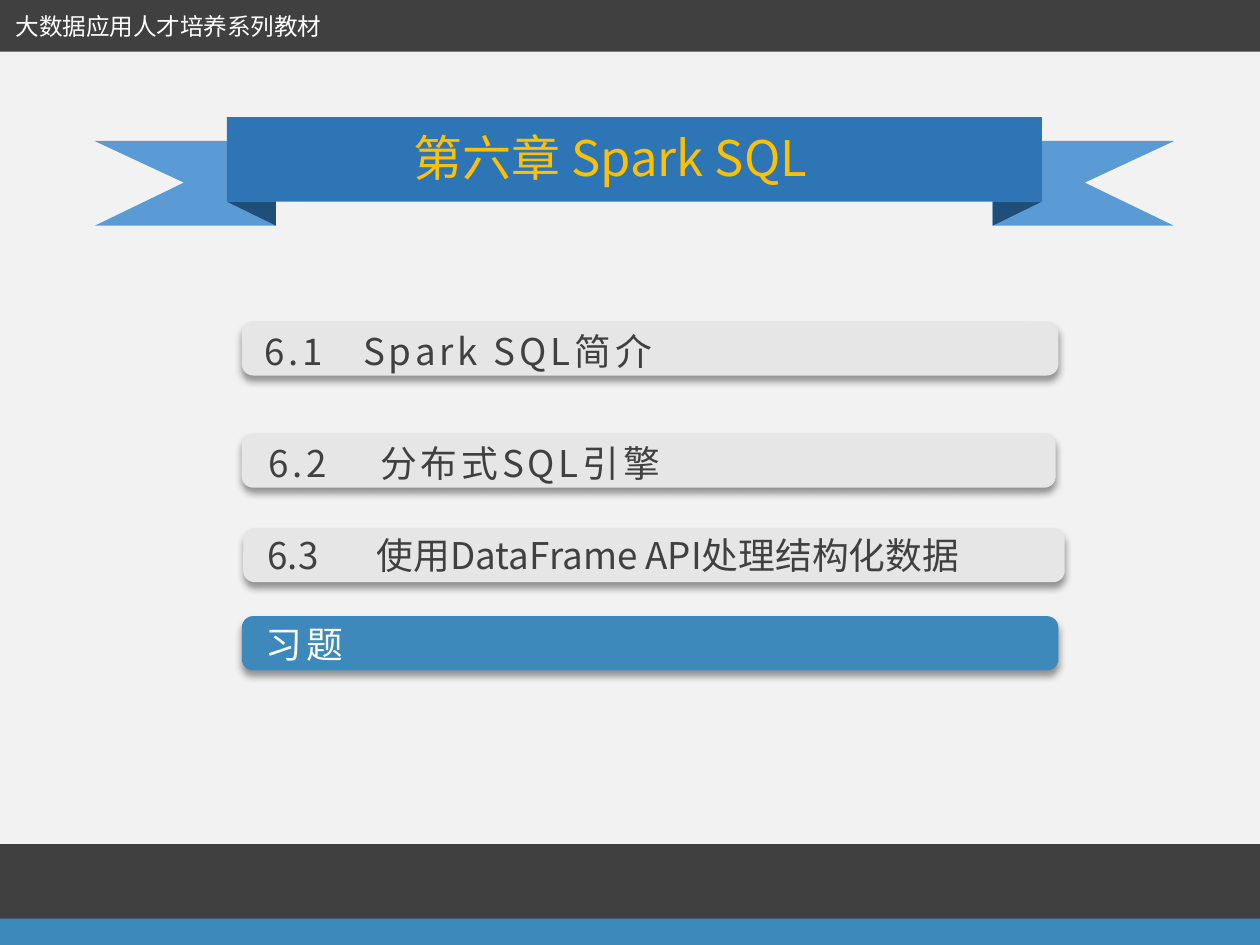
from lxml.etree import SubElement
from pptx import Presentation
from pptx.dml.color import RGBColor
from pptx.enum.shapes import MSO_SHAPE
from pptx.enum.text import MSO_ANCHOR, MSO_AUTO_SIZE, PP_ALIGN
from pptx.oxml.ns import qn
from pptx.util import Pt

FONT = "Noto Sans CJK SC"
DARK, BLUE, GREY, WHITE = "404040", "3D89BC", "E6E6E6", "FFFFFF"
TITLE = "第六章 Spark SQL"
SERIES = "大数据应用人才培养系列教材"
STRIPS = [
    (-0.7, -0.7, 721.4, 30.2, DARK),
    (0, 482.4, 720, 43.2, DARK),
    (0, 524.9, 720, 15.1, BLUE),
]
SPACED = dict(size=21, color=DARK, spacing=220)
ITEMS = [
    dict(bar=(138.2, 183.6, 466.6, 31), fill=GREY, text="6.1\tSpark SQL简介",
         box=(144, 184.3, 245.5, 32.4), style=dict(SPACED, tab=56.5)),
    dict(bar=(138.2, 247.7, 465.1, 31), fill=GREY, text="6.2\t分布式SQL引擎",
         box=(146.2, 248.4, 465.8, 32.4), style=dict(SPACED, tab=64)),
    dict(bar=(139, 301.7, 469.4, 31), fill=GREY, text="6.3\t使用DataFrame API处理结构化数据",
         box=None, style=dict(size=21, color=DARK, tab=62.5, left=12)),
    dict(bar=(138.2, 352.1, 466.6, 31), fill=BLUE, text="习题",
         box=(144.7, 351.4, 59, 32.4), style=dict(SPACED, color=WHITE)),
]
RIBBON_SPAN = 725
TAIL = [(54, 80.6), (157.7, 80.6), (157.7, 128.9), (54.4, 128.9), (105.1, 104.4)]
FOLD = dict(left=136.8, top=108, width=13.7, height=28.1)


def rgb(color):
    return RGBColor.from_string(color)


def paint(shape, color):
    shape.fill.solid()
    shape.fill.fore_color.rgb = rgb(color)
    shape.line.fill.background()
    shape.shadow.inherit = False
    return shape


def add_block(s, kind, box, color):
    return paint(s.shapes.add_shape(kind, *map(Pt, box)), color)


def add_tail(s, points):
    corners = [(Pt(x), Pt(y)) for x, y in points]
    builder = s.shapes.build_freeform(*corners[0], scale=1.0)
    builder.add_line_segments(corners[1:], close=True)
    return paint(builder.convert_to_shape(), "5B9BD5")


def add_fold(s, left, rotation, flips):
    box = (left, FOLD["top"], FOLD["width"], FOLD["height"])
    fold = add_block(s, MSO_SHAPE.RIGHT_TRIANGLE, box, "1F4E79")
    fold.rotation = rotation
    for flip in flips:
        fold.element.spPr.find(qn("a:xfrm")).set(flip, "1")


def add_shadow(shape):
    effects = shape.element.spPr.find(qn("a:effectLst"))
    shadow = SubElement(effects, qn("a:outerShdw"), blurRad=str(Pt(4)), dist=str(Pt(3)),
                        dir="5400000", algn="t", rotWithShape="0")
    color = SubElement(shadow, qn("a:srgbClr"), val="000000")
    SubElement(color, qn("a:alpha"), val="40000")


def write(shape, text, size, color, align=PP_ALIGN.LEFT, left=7.2, spacing=0, tab=None):
    tf = shape.text_frame
    frame = dict(word_wrap=True, auto_size=MSO_AUTO_SIZE.NONE, vertical_anchor=MSO_ANCHOR.MIDDLE,
                 margin_left=Pt(left), margin_right=Pt(0),
                 margin_top=Pt(3.6), margin_bottom=Pt(3.6))
    for name, value in frame.items():
        setattr(tf, name, value)
    p = tf.paragraphs[0]
    p.alignment = align
    if tab:
        tabs = SubElement(p._p.get_or_add_pPr(), qn("a:tabLst"))
        SubElement(tabs, qn("a:tab"), pos=str(Pt(tab)), algn="l")
    r = p.add_run()
    r.text = text
    r.font.size = Pt(size)
    r.font.color.rgb = rgb(color)
    r.font.name = FONT
    props = r.font._element
    SubElement(props, qn("a:ea"), typeface=FONT)
    if spacing:
        props.set("spc", str(spacing))


def add_text(s, box, text, **style):
    write(s.shapes.add_textbox(*map(Pt, box)), text, **style)


def add_ribbon(s):
    add_tail(s, TAIL)
    add_fold(s, FOLD["left"], 90, ["flipV"])
    add_tail(s, [(RIBBON_SPAN - x, y) for x, y in TAIL])
    add_fold(s, RIBBON_SPAN - FOLD["left"] - FOLD["width"], 270, ["flipH", "flipV"])
    add_block(s, MSO_SHAPE.RECTANGLE, (129.6, 67, 465.8, 48.2), "2E75B6")
    title = s.shapes.title
    title.left, title.top, title.width, title.height = map(Pt, (226.1, 69.1, 245.5, 41))
    write(title, TITLE, size=28, color="FFC000", align=PP_ALIGN.CENTER, left=0)
    title.element.getparent().append(title.element)


def add_item(s, bar, fill, text, box, style):
    shape = add_block(s, MSO_SHAPE.ROUNDED_RECTANGLE, bar, fill)
    shape.adjustments[0] = 0.21
    add_shadow(shape)
    if box:
        add_text(s, box, text, **style)
    else:
        write(shape, text, **style)


def main():
    prs = Presentation()
    prs.slide_width, prs.slide_height = Pt(720), Pt(540)
    s = prs.slides.add_slide(prs.slide_layouts[5])
    s.background.fill.solid()
    s.background.fill.fore_color.rgb = rgb("F2F2F2")
    add_ribbon(s)
    for *box, color in STRIPS:
        add_block(s, MSO_SHAPE.RECTANGLE, box, color)
    for item in ITEMS:
        add_item(s, **item)
    add_text(s, (0.7, 2.9, 191.5, 23.8), SERIES, size=13.5, color=WHITE,
             align=PP_ALIGN.CENTER, left=0)
    prs.save("out.pptx")


if __name__ == "__main__":
    main()
